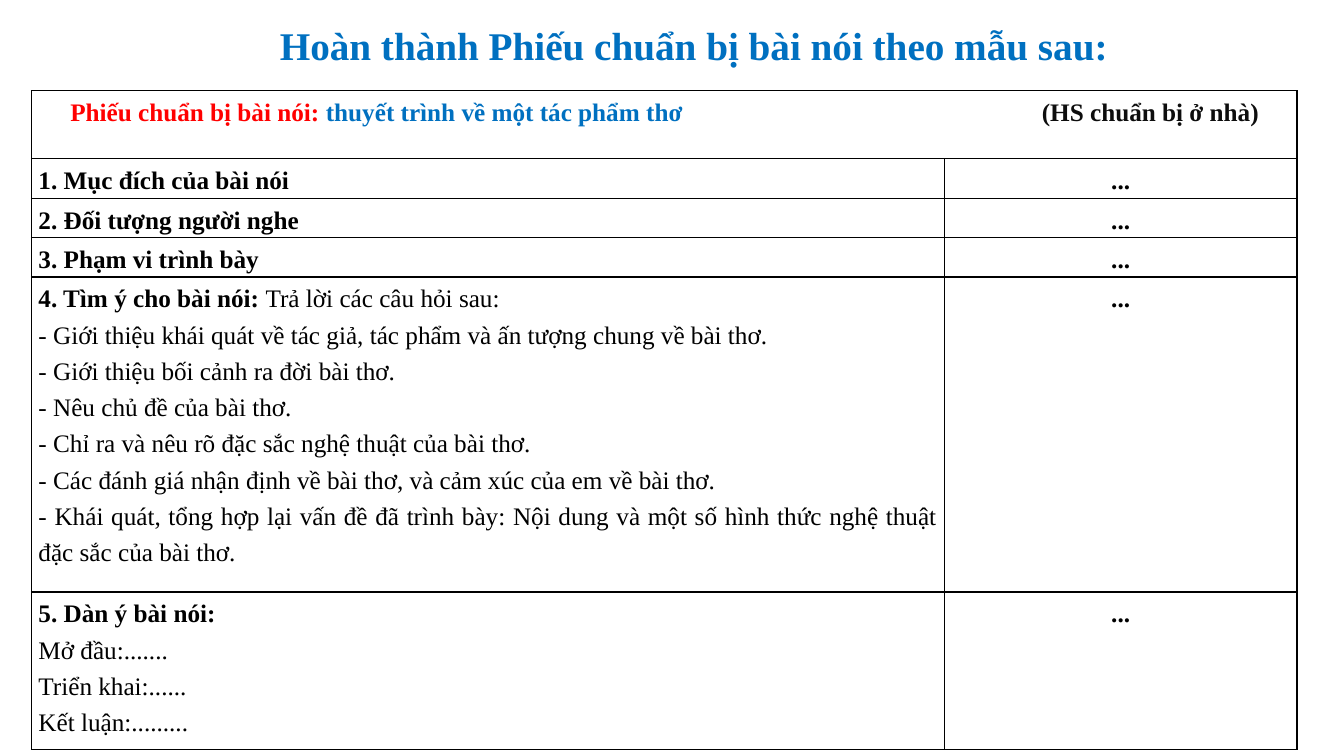
import pptx
import pptx.dml.color
import pptx.enum.text
import pptx.oxml
import pptx.oxml.ns
import pptx.util
from pptx.util import Pt

FONT = "Times New Roman"
BLUE, RED, BLACK, WHITE = "0070C0", "FF0000", "000000", "FFFFFF"
ALIGN = pptx.enum.text.PP_ALIGN
NAMESPACE = pptx.oxml.ns.nsdecls("a")

HEADING = [
    ("Phiếu chuẩn bị bài nói: ", True, RED),
    ("thuyết trình về một tác phẩm thơ\t", True, BLUE),
    ("(HS chuẩn bị ở nhà)", True, "0D0D0D"),
]
SECTIONS = [
    (28.2, "1. Mục đích của bài nói", "", []),
    (28.2, "2. Đối tượng người nghe", "", []),
    (28.2, "3. Phạm vi trình bày", "", []),
    (225, "4. Tìm ý cho bài nói: ", "Trả lời các câu hỏi sau:", [
        "- Giới thiệu khái quát về tác giả, tác phẩm và ấn tượng chung về bài thơ.",
        "- Giới thiệu bối cảnh ra đời bài thơ.",
        "- Nêu chủ đề của bài thơ.",
        "- Chỉ ra và nêu rõ đặc sắc nghệ thuật của bài thơ.",
        "- Các đánh giá nhận định về bài thơ, và cảm xúc của em về bài thơ.",
        "- Khái quát, tổng hợp lại vấn đề đã trình bày: Nội dung và một số hình thức "
        "nghệ thuật đặc sắc của bài thơ.",
    ]),
    (112, "5. Dàn ý bài nói:", "", ["Mở đầu:.......", "Triển khai:......", "Kết luận:........."]),
]


def colour(value):
    """Turn a hex string into a colour."""
    return pptx.dml.color.RGBColor.from_string(value)


def style_font(font, size, bold, value):
    """Set the shared typeface with a size, weight and colour."""
    font.name, font.size, font.bold = FONT, Pt(size), bold
    font.color.rgb = colour(value)


def frame_cell(cell, margin_left=5):
    """Give a cell a white fill, thin black borders and its margins."""
    cell.margin_left, cell.margin_right = Pt(margin_left), Pt(5)
    cell.margin_top = cell.margin_bottom = 0
    properties = cell._tc.get_or_add_tcPr()
    for side in ("lnL", "lnR", "lnT", "lnB"):
        properties.append(pptx.oxml.parse_xml(
            f'<a:{side} {NAMESPACE} w="{Pt(1)}"><a:solidFill>'
            f'<a:srgbClr val="{BLACK}"/></a:solidFill></a:{side}>'))
    cell.fill.solid()
    cell.fill.fore_color.rgb = colour(WHITE)


def write_paragraph(para, spans, align, tab=None):
    """Fill a paragraph with (text, bold, colour) spans and an optional tab stop."""
    para.alignment, para.line_spacing = align, 1.3
    if tab:
        para._p.get_or_add_pPr().append(pptx.oxml.parse_xml(
            f'<a:tabLst {NAMESPACE}><a:tab pos="{Pt(tab)}" algn="l"/></a:tabLst>'))
    style_font(para.font, 18, spans[0][1], spans[0][2])
    for text, bold, value in spans:
        span = para.add_run()
        span.text = text
        if (bold, value) != spans[0][1:]:
            span.font.bold = bold
            span.font.color.rgb = colour(value)


def write_cell(cell, lines, align):
    """Write one paragraph for each list of spans."""
    frame_cell(cell)
    for index, spans in enumerate(lines):
        frame = cell.text_frame
        para = frame.add_paragraph() if index else frame.paragraphs[0]
        write_paragraph(para, spans, align)


def add_title(page, left, top, width, height):
    """Place the slide title."""
    title = page.shapes.title
    title.left, title.top, title.width, title.height = map(Pt, (left, top, width, height))
    frame = title.text_frame
    frame.text = "Hoàn thành Phiếu chuẩn bị bài nói theo mẫu sau:"
    frame.word_wrap = False
    frame.auto_size = pptx.enum.text.MSO_AUTO_SIZE.SHAPE_TO_FIT_TEXT
    frame.vertical_anchor = pptx.enum.text.MSO_ANCHOR.TOP
    para = frame.paragraphs[0]
    para.alignment = ALIGN.LEFT
    style_font(para.font, 28, True, BLUE)


def add_worksheet(page, left, top, width, height):
    """Place the preparation table, its heading spanning both columns."""
    table = page.shapes.add_table(
        len(SECTIONS) + 1, 2, Pt(left), Pt(top), Pt(width), Pt(height)).table
    table.first_row = table.horz_banding = False
    answer_width = 252
    table.columns[0].width = Pt(width - answer_width)
    table.columns[1].width = Pt(answer_width)
    table.rows[0].height = Pt(height - sum(section[0] for section in SECTIONS))
    heading = table.cell(0, 0)
    heading.merge(table.cell(0, 1))
    frame_cell(heading, 27.7)
    frame_cell(table.cell(0, 1))
    write_paragraph(heading.text_frame.paragraphs[0], HEADING, ALIGN.LEFT, 694)
    for row, (row_height, label, remark, details) in enumerate(SECTIONS, 1):
        table.rows[row].height = Pt(row_height)
        first = [(label, True, BLACK)] + ([(remark, False, BLACK)] if remark else [])
        lines = [first] + [[(detail, False, BLACK)] for detail in details]
        write_cell(table.cell(row, 0), lines, ALIGN.JUSTIFY)
        write_cell(table.cell(row, 1), [[("...", True, BLACK)]], ALIGN.CENTER)


def main():
    """Build the slide and save the deck."""
    deck = pptx.Presentation()
    deck.slide_width, deck.slide_height = Pt(960), Pt(540)
    page = deck.slides.add_slide(deck.slide_layouts[5])
    add_title(page, 192.7, 11.5, 612.7, 41)
    add_worksheet(page, 22.5, 64.8, 904, 470.2)
    deck.save("out.pptx")


if __name__ == "__main__":
    main()
